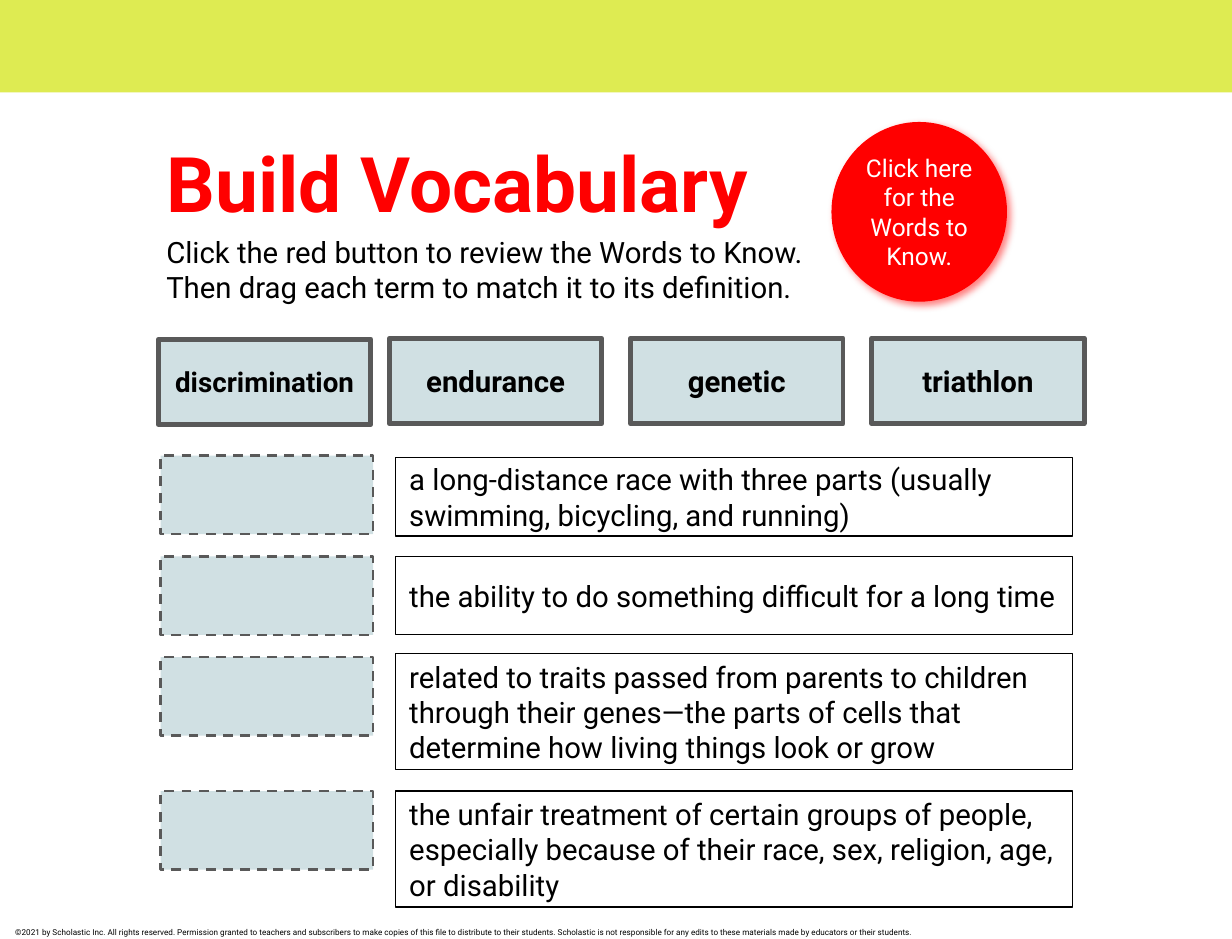
import pptx
import pptx.util
import pptx.dml.color
import pptx.enum.dml
import pptx.enum.shapes
import pptx.enum.text
import pptx.oxml
import pptx.oxml.ns

Cm = pptx.util.Cm
Pt = pptx.util.Pt
ALIGN = pptx.enum.text.PP_ALIGN
ANCHOR = pptx.enum.text.MSO_ANCHOR
SHAPES = pptx.enum.shapes.MSO_SHAPE

FONT = "Roboto"
COLORS = {
    "banner": "DEEB52",
    "accent": "FF0000",
    "card": "D0E0E3",
    "border": "595959",
    "text": "000000",
    "light": "FFFFFF",
}

# Term, left, top, text size
TERMS = [("discrimination", 3.43, 7.34, 17)] + [
    (term, 8.43 + 5.22 * index, 7.32, 18)
    for index, term in enumerate(["endurance", "genetic", "triathlon"])
]

# Definition, its top and height, top of the drop slot beside it
DEFINITIONS = [
    ("a long-distance race with three parts (usually swimming, bicycling, and running)",
     9.9, 1.7, 9.86),
    ("the ability to do something difficult for a long time", 12.04, 1.7, 12.04),
    ("related to traits passed from parents to children through their genes—the parts "
     "of cells that determine how living things look or grow", 14.15, 2.51, 14.22),
    ("the unfair treatment of certain groups of people, especially because of their "
     "race, sex, religion, age, or disability", 17.12, 2.51, 17.12),
]


def color(name):
    return pptx.dml.color.RGBColor.from_string(COLORS[name])


def write(box, lines, size, ink="text", bold=False, align=ALIGN.LEFT,
          anchor=ANCHOR.MIDDLE, inset=0.3):
    frame = box.text_frame
    frame.word_wrap = True
    frame.auto_size = pptx.enum.text.MSO_AUTO_SIZE.NONE
    frame.vertical_anchor = anchor
    frame.margin_left = frame.margin_right = Cm(inset)
    frame.margin_top = frame.margin_bottom = Cm(inset)
    para = frame.paragraphs[0]
    para.alignment = align
    for index, line in enumerate(lines):
        if index:
            para.add_line_break()
        span = para.add_run()
        span.text = line
        span.font.name = FONT
        span.font.size = Pt(size)
        span.font.bold = bold
        span.font.color.rgb = color(ink)


def add_box(page, left, top, width, height, fill=None, line=None, weight=0.75,
            dashed=False, kind=SHAPES.RECTANGLE):
    box = page.shapes.add_shape(kind, Cm(left), Cm(top), Cm(width), Cm(height))
    box.shadow.inherit = False
    if fill:
        box.fill.solid()
        box.fill.fore_color.rgb = color(fill)
    else:
        box.fill.background()
    if line:
        box.line.color.rgb = color(line)
        box.line.width = Pt(weight)
        if dashed:
            box.line.dash_style = pptx.enum.dml.MSO_LINE.DASH
    else:
        box.line.fill.background()
    return box


def add_text(page, left, top, width, height, lines, size, **style):
    box = page.shapes.add_textbox(Cm(left), Cm(top), Cm(width), Cm(height))
    write(box, lines, size, **style)


def add_title(page, text):
    title = page.shapes.title
    title.left, title.top = Cm(3.3), Cm(2.64)
    title.width, title.height = Cm(13.92), Cm(2.26)
    write(title, [text], 47, ink="accent", bold=True, anchor=ANCHOR.TOP)


def add_button(page, text):
    button = add_box(page, 18, 2.64, 3.8, 3.89, fill="accent", kind=SHAPES.OVAL)
    write(button, [text], 15, ink="light", align=ALIGN.CENTER, inset=0)
    # Soft red glow to the lower right
    effects = button._element.spPr.find(pptx.oxml.ns.qn("a:effectLst"))
    effects.append(pptx.oxml.parse_xml(
        f'<a:outerShdw {pptx.oxml.ns.nsdecls("a")} blurRad="{Pt(4.5)}" dist="{Pt(3)}" '
        f'dir="{43 * 60000}" algn="bl" rotWithShape="0">'
        f'<a:srgbClr val="{COLORS["accent"]}"><a:alpha val="50000"/></a:srgbClr>'
        '</a:outerShdw>'))


def add_term(page, term, left, top, size):
    card = add_box(page, left, top, 4.6, 1.85, fill="card", line="border", weight=3)
    write(card, [term], size, bold=True, align=ALIGN.CENTER, inset=0.25)


def add_definition(page, text, top, height, slot_top):
    add_box(page, 3.48, slot_top, 4.6, 1.7, fill="card", line="border",
            weight=1.5, dashed=True)
    box = add_box(page, 8.56, top, 14.66, height, line="text")
    write(box, [text], 18)


def main():
    deck = pptx.Presentation()
    deck.slide_width, deck.slide_height = Cm(26.67), Cm(20.32)
    page = deck.slides.add_slide(deck.slide_layouts[5])

    # Banner and copyright line
    add_box(page, 0, -0.03, 26.67, 2.03, fill="banner")
    add_text(page, 0.33, 20.07, 22.28, 0.25, [
        "©2021 by Scholastic Inc. All rights reserved. Permission granted to teachers and "
        "subscribers to make copies of this file to distribute to their students. "
        "Scholastic is not responsible for any edits to these materials made by educators "
        "or their students."], 5, anchor=ANCHOR.TOP, inset=0)

    # Heading, instructions and button
    add_title(page, "Build Vocabulary")
    add_text(page, 3.3, 4.7, 15.85, 2.26, [
        "Click the red button to review the Words to Know.",
        "Then drag each term to match it to its definition."], 18)
    add_button(page, "Click here for the Words to Know.")

    # Matching exercise
    for definition in DEFINITIONS:
        add_definition(page, *definition)
    for term in TERMS:
        add_term(page, *term)

    deck.save("out.pptx")


if __name__ == "__main__":
    main()
